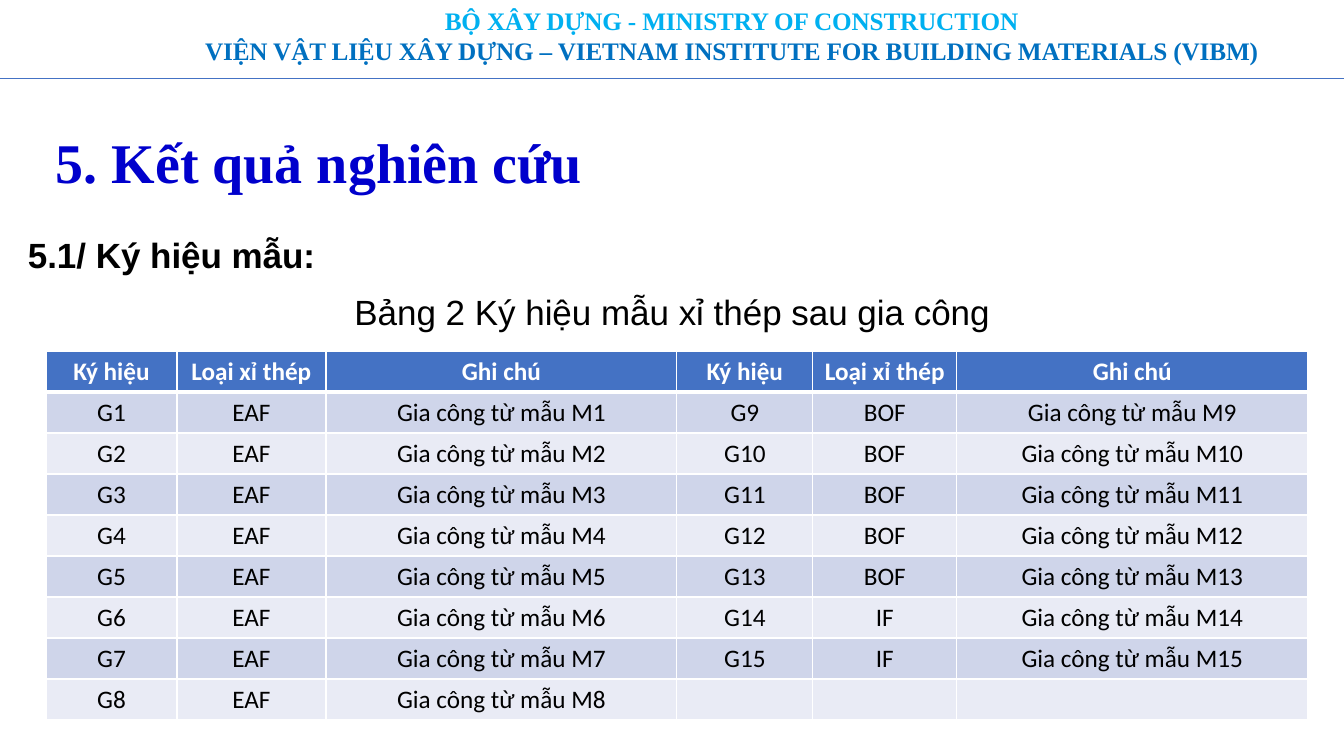
from lxml import etree
from pptx import Presentation
from pptx import util as u
from pptx.dml.color import RGBColor
from pptx.enum import shapes, text
from pptx.oxml.ns import qn

PX = u.Inches(1) / 100.8
HEX = {"sky": "00B0F0", "sea": "0070C0", "navy": "0000CC", "black": "000000",
       "white": "FFFFFF", "blue": "4472C4", "dark": "CFD5EA", "light": "E9EBF5"}
SERIF, SANS, BODY = "Times New Roman", "Arial", "Calibri"
MID = text.PP_ALIGN.CENTER
COLS = [131, 149, 351, 136, 144, 351]
ROW = 41
HEADS = ["Ký hiệu", "Loại xỉ thép", "Ghi chú"] * 2
KINDS = ["EAF"] * 8 + ["BOF"] * 5 + ["IF"] * 2
HALF = 8


def px(n):
    return u.Emu(round(n * PX))


def tint(name):
    return RGBColor.from_string(HEX[name])


def add_run(para, words, font, size, color, bold=False):
    run = para.add_run()
    run.text = words
    run.font.name = font
    run.font.size = u.Pt(size)
    run.font.bold = bold
    run.font.color.rgb = tint(color)
    return run


def add_box(slide, left, top, width, height, grow=False):
    frame = slide.shapes.add_textbox(px(left), px(top), px(width), px(height)).text_frame
    frame.word_wrap = True
    if grow:
        frame.auto_size = text.MSO_AUTO_SIZE.SHAPE_TO_FIT_TEXT
    return frame


def add_banner(slide):
    para = add_box(slide, 152, 0, 1159, 102).paragraphs[0]
    para.alignment = MID
    top = add_run(para, "BỘ XÂY DỰNG - MINISTRY OF CONSTRUCTION", SERIF, 18, "sky", True)
    para.add_line_break()
    low = add_run(para, "VIỆN VẬT LIỆU XÂY DỰNG – VIETNAM INSTITUTE FOR BUILDING MATERIALS (VIBM)",
                  SERIF, 18, "sea", True)
    for run in (top, low):
        run.font._element.set("spc", "-10")


def add_rule(slide, top):
    rule = slide.shapes.add_connector(shapes.MSO_CONNECTOR.STRAIGHT, 0, px(top), px(1344), px(top))
    rule.line.color.rgb = tint("blue")
    rule.line.width = u.Pt(0.5)
    etree.SubElement(rule._element.spPr, qn("a:effectLst"))


def add_title(slide, words):
    frame = add_box(slide, 46, 121, 1251, 89)
    frame.vertical_anchor = text.MSO_ANCHOR.MIDDLE
    para = frame.paragraphs[0]
    para.line_spacing = 0.9
    add_run(para, words, SERIF, 40, "navy", True)


def add_intro(slide):
    frame = add_box(slide, 18, 226, 1308, 109, True)
    lines = [("5.1/ Ký hiệu mẫu:", text.PP_ALIGN.JUSTIFY, True),
             ("Bảng 2 Ký hiệu mẫu xỉ thép sau gia công", MID, False)]
    for i, (words, align, bold) in enumerate(lines):
        para = frame.add_paragraph() if i else frame.paragraphs[0]
        para.alignment = align
        para.line_spacing = 1.07
        para.space_after = u.Pt(8)
        add_run(para, words, SANS, 25, "black", bold)


def add_edge(cell, side, width):
    props = cell._tc.get_or_add_tcPr()
    edge = etree.SubElement(props, qn("a:ln" + side), w=str(u.Pt(width)))
    fill = etree.SubElement(edge, qn("a:solidFill"))
    etree.SubElement(fill, qn("a:srgbClr"), val=HEX["white"])


def sample(n):
    if n > len(KINDS):
        return [""] * 3
    return [f"G{n}", KINDS[n - 1], f"Gia công từ mẫu M{n}"]


def add_grid(slide):
    rows = [HEADS] + [sample(n) + sample(n + HALF) for n in range(1, HALF + 1)]
    grid = slide.shapes.add_table(len(rows), len(COLS), px(46), px(351),
                                  px(sum(COLS)), px(ROW * len(rows))).table
    for col, width in zip(grid.columns, COLS):
        col.width = px(width)
    for r, row in enumerate(rows):
        grid.rows[r].height = px(ROW)
        head = r == 0
        back = "blue" if head else "dark" if r % 2 else "light"
        for c, words in enumerate(row):
            cell = grid.cell(r, c)
            for side in "LRTB":
                thick = (r, side) in ((0, "B"), (1, "T"))
                add_edge(cell, side, 3 if thick else 1)
            cell.fill.solid()
            cell.fill.fore_color.rgb = tint(back)
            para = cell.text_frame.paragraphs[0]
            para.alignment = MID
            if words:
                add_run(para, words, BODY, 18, "white" if head else "black", head)


def main():
    deck = Presentation()
    deck.slide_width, deck.slide_height = px(1344), px(756)
    slide = deck.slides.add_slide(deck.slide_layouts[6])
    add_banner(slide)
    add_rule(slide, 78)
    add_title(slide, "5. Kết quả nghiên cứu")
    add_intro(slide)
    add_grid(slide)
    deck.save("out.pptx")


if __name__ == "__main__":
    main()
